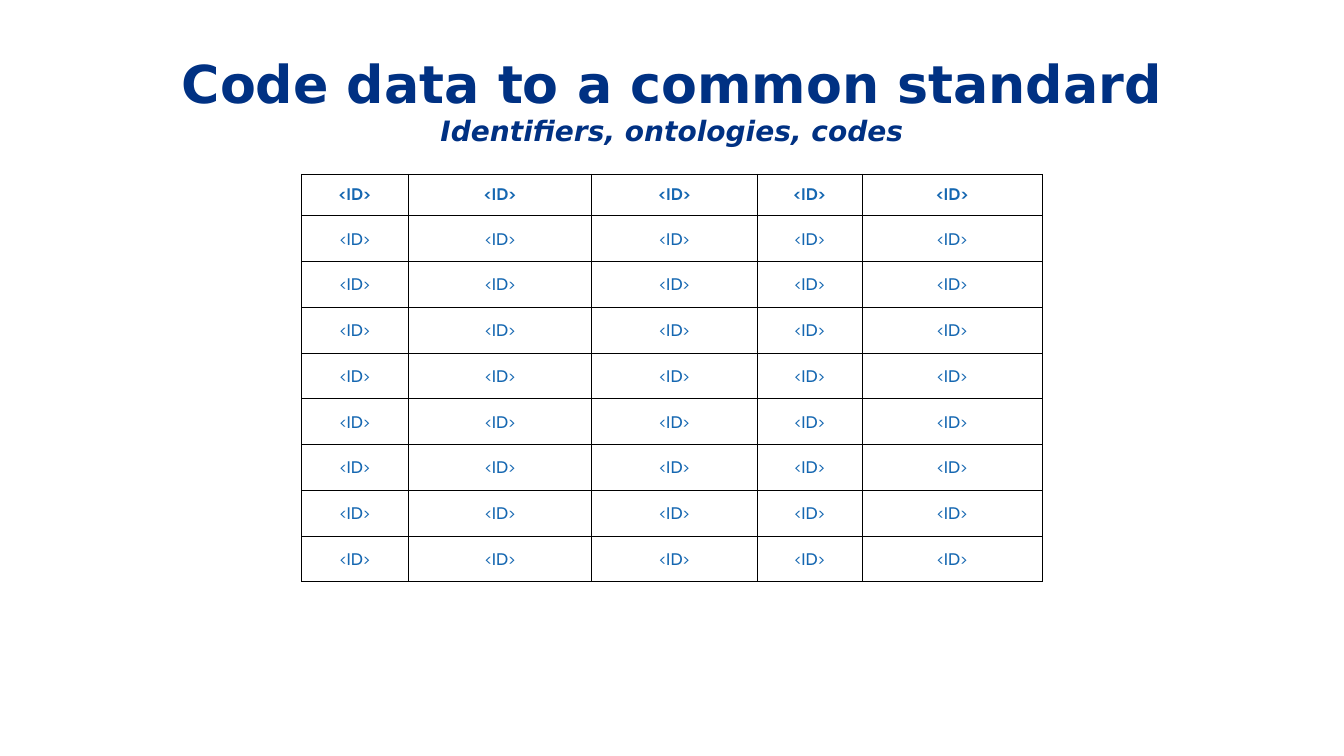
from lxml import etree
from pptx import Presentation, util as u
from pptx.dml.color import RGBColor
from pptx.enum import text
from pptx.oxml.ns import qn

COLORS = {"title": "003183", "id": "1567B1", "border": "000000"}
COLS = [1.06, 1.82, 1.64, 1.04, 1.79]
ROWS = [0.41] + [0.454] * 8


def write(p, words, color, **font):
    p.alignment = text.PP_ALIGN.CENTER
    r = p.add_run()
    r.text = words
    r.font.color.rgb = RGBColor.from_string(COLORS[color])
    for name, value in font.items():
        setattr(r.font, name, value)


def add_borders(cell):
    tc_pr = cell._tc.get_or_add_tcPr()
    for i, side in enumerate("LRTB"):
        ln = etree.Element(qn("a:ln" + side), w=str(u.Pt(0.75)))
        fill = etree.SubElement(ln, qn("a:solidFill"))
        etree.SubElement(fill, qn("a:srgbClr"), val=COLORS["border"])
        tc_pr.insert(i, ln)


prs = Presentation()
prs.slide_width, prs.slide_height = u.Inches(13.33), u.Inches(7.5)
s = prs.slides.add_slide(prs.slide_layouts[6])
margins = {f"margin_{side}": u.Inches(0.1) for side in ("left", "right", "top", "bottom")}

# Title and subtitle
sp = s.shapes.add_textbox(*map(u.Inches, (0.84, 0.62, 11.65, 0.73)))
tf = sp.text_frame
for name, value in {**margins, "word_wrap": True,
                    "vertical_anchor": text.MSO_ANCHOR.MIDDLE}.items():
    setattr(tf, name, value)
write(tf.paragraphs[0], "Code data to a common standard", "title",
      name="DejaVu Sans", size=u.Pt(37.3), bold=True)
write(tf.add_paragraph(), "Identifiers, ontologies, codes", "title",
      name="DejaVu Sans", size=u.Pt(20), bold=True, italic=True)

# Table of identifiers
size = map(u.Inches, (2.99, 1.73, sum(COLS), sum(ROWS)))
table = s.shapes.add_table(len(ROWS), len(COLS), *size).table
table.first_row = table.horz_banding = False
for column, width in zip(table.columns, COLS):
    column.width = u.Inches(width)
for i, height in enumerate(ROWS):
    table.rows[i].height = u.Inches(height)
    for cell in table.rows[i].cells:
        for name, value in margins.items():
            setattr(cell, name, value)
        cell.fill.background()
        add_borders(cell)
        p = cell.text_frame.paragraphs[0]
        if i > 0:
            p.line_spacing = 1.15
        write(p, "<ID>", "id", name="Cabin", size=u.Pt(12), bold=i == 0)

prs.save("out.pptx")
